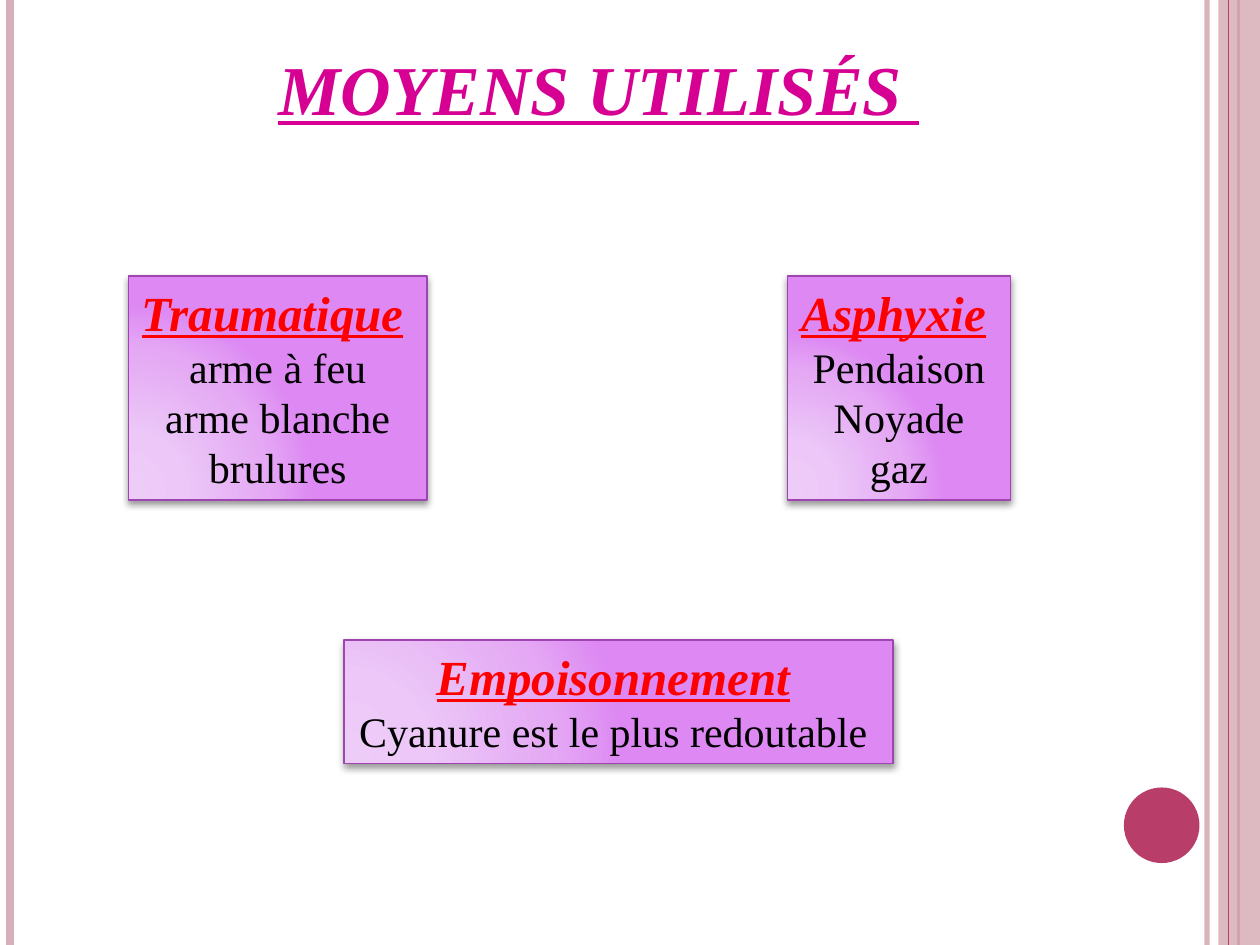
from lxml import etree
from pptx import Presentation
from pptx.dml.color import RGBColor
from pptx.enum import shapes, text
from pptx.oxml import parse_xml
from pptx.oxml.ns import nsdecls, qn
from pptx.util import Inches, Pt

FONT = "Times New Roman"
ROSE = RGBColor(0xD8, 0xAF, 0xB9)
RASPBERRY = RGBColor(0xB8, 0x3D, 0x68)
MAGENTA = RGBColor(0xD6, 0x00, 0x93)
RED = RGBColor(0xFF, 0x00, 0x00)
BLACK = RGBColor(0x00, 0x00, 0x00)
PURPLE = RGBColor(0x9F, 0x45, 0xB2)
GRADIENT = [(0, RGBColor(0xEE, 0xCC, 0xF8)), (30, RGBColor(0xEC, 0xC7, 0xF7)),
            (75, RGBColor(0xE4, 0xA8, 0xF4)), (100, RGBColor(0xDD, 0x88, 0xF3))]


def set_alpha(properties, percent):
    color = next(properties.iter(qn("a:srgbClr")))
    etree.SubElement(color, qn("a:alpha"), val=str(percent * 1000))


def add_rule(slide, x, height, color, weight, alpha=None):
    rule = slide.shapes.add_connector(
        shapes.MSO_CONNECTOR.STRAIGHT, Inches(x), 0, Inches(x), height)
    rule.line.color.rgb = color
    rule.line.width = Pt(weight)
    properties = rule._element.spPr
    if alpha:
        set_alpha(properties, alpha)
    etree.SubElement(properties, qn("a:effectLst"))


def add_plain_shape(slide, kind, box, color):
    shape = slide.shapes.add_shape(kind, *map(Inches, box))
    shape.shadow.inherit = False
    shape.fill.solid()
    shape.fill.fore_color.rgb = color
    shape.line.fill.background()
    return shape


def add_span(para, words, size, color, heading=False):
    span = para.add_run()
    span.text = words
    font = span.font
    font.name, font.size, font.color.rgb = FONT, Pt(size), color
    font.bold = font.italic = font.underline = heading


def add_borders(slide, height):
    """Vertical rules, right band and page-number disc."""
    add_rule(slide, 9.58, height, ROSE, 3, alpha=93)
    add_rule(slide, 0.08, height, ROSE, 4.5)
    add_rule(slide, 9.83, height, RASPBERRY, 1.5)
    band = add_plain_shape(slide, shapes.MSO_SHAPE.RECTANGLE,
                           (9.67, 0, 0.33, 7.5), ROSE)
    set_alpha(band._element.spPr, 87)
    add_rule(slide, 9.75, height, RASPBERRY, 0.75)
    add_plain_shape(slide, shapes.MSO_SHAPE.OVAL, (8.92, 6.25, 0.6, 0.6), RASPBERRY)


def add_title(slide, box, words):
    title = slide.shapes.add_textbox(*map(Inches, box))
    frame = title.text_frame
    frame.word_wrap = False
    frame.auto_size = text.MSO_AUTO_SIZE.SHAPE_TO_FIT_TEXT
    add_span(frame.paragraphs[0], words, 40, MAGENTA, heading=True)


def style_card(card):
    """Radial lilac gradient, purple outline and soft shadow below."""
    card.line.color.rgb = PURPLE
    card.line.width = Pt(1)
    card.shadow.inherit = False
    properties = card._element.spPr
    stops = "".join(f'<a:gs pos="{position * 1000}"><a:srgbClr val="{color}"/></a:gs>'
                    for position, color in GRADIENT)
    properties.find(qn("a:prstGeom")).addnext(parse_xml(
        f'<a:gradFill {nsdecls("a")} rotWithShape="1"><a:gsLst>{stops}</a:gsLst>'
        '<a:path path="circle"><a:fillToRect l="5000" t="100000" r="120000" b="10000"/>'
        '</a:path></a:gradFill>'))
    properties.find(qn("a:effectLst")).append(parse_xml(
        f'<a:outerShdw {nsdecls("a")} blurRad="{Pt(4)}" dist="{Pt(2)}" dir="5400000" '
        'rotWithShape="0"><a:srgbClr val="000000"><a:alpha val="40000"/>'
        '</a:srgbClr></a:outerShdw>'))


def add_card(slide, box, heading, lines):
    card = slide.shapes.add_shape(shapes.MSO_SHAPE.RECTANGLE, *map(Inches, box))
    style_card(card)
    frame = card.text_frame
    frame.word_wrap = False
    frame.auto_size = text.MSO_AUTO_SIZE.SHAPE_TO_FIT_TEXT
    frame.vertical_anchor = text.MSO_ANCHOR.TOP
    para = frame.paragraphs[0]
    para.alignment = text.PP_ALIGN.CENTER
    add_span(para, heading, 28, RED, heading=True)
    add_span(para, " ", 24, BLACK)
    for line in lines:
        para = frame.add_paragraph()
        para.alignment = text.PP_ALIGN.CENTER
        add_span(para, line, 24, BLACK)


def main():
    deck = Presentation()
    deck.slide_width, deck.slide_height = Inches(10), Inches(7.5)
    slide = deck.slides.add_slide(deck.slide_layouts[6])
    add_borders(slide, deck.slide_height)
    add_title(slide, (2.11, 0.31, 5.34, 0.77), "MOYENS UTILISÉS ")
    # Means, one card each
    add_card(slide, (1.02, 2.19, 2.37, 1.78), "Traumatique",
             [" arme à feu ", " arme blanche ", " brulures "])
    add_card(slide, (6.25, 2.19, 1.77, 1.78), "Asphyxie",
             ["Pendaison", "Noyade", "gaz"])
    add_card(slide, (2.73, 5.08, 4.36, 0.98), "Empoisonnement",
             ["Cyanure est le plus redoutable "])
    deck.save("out.pptx")


if __name__ == "__main__":
    main()
